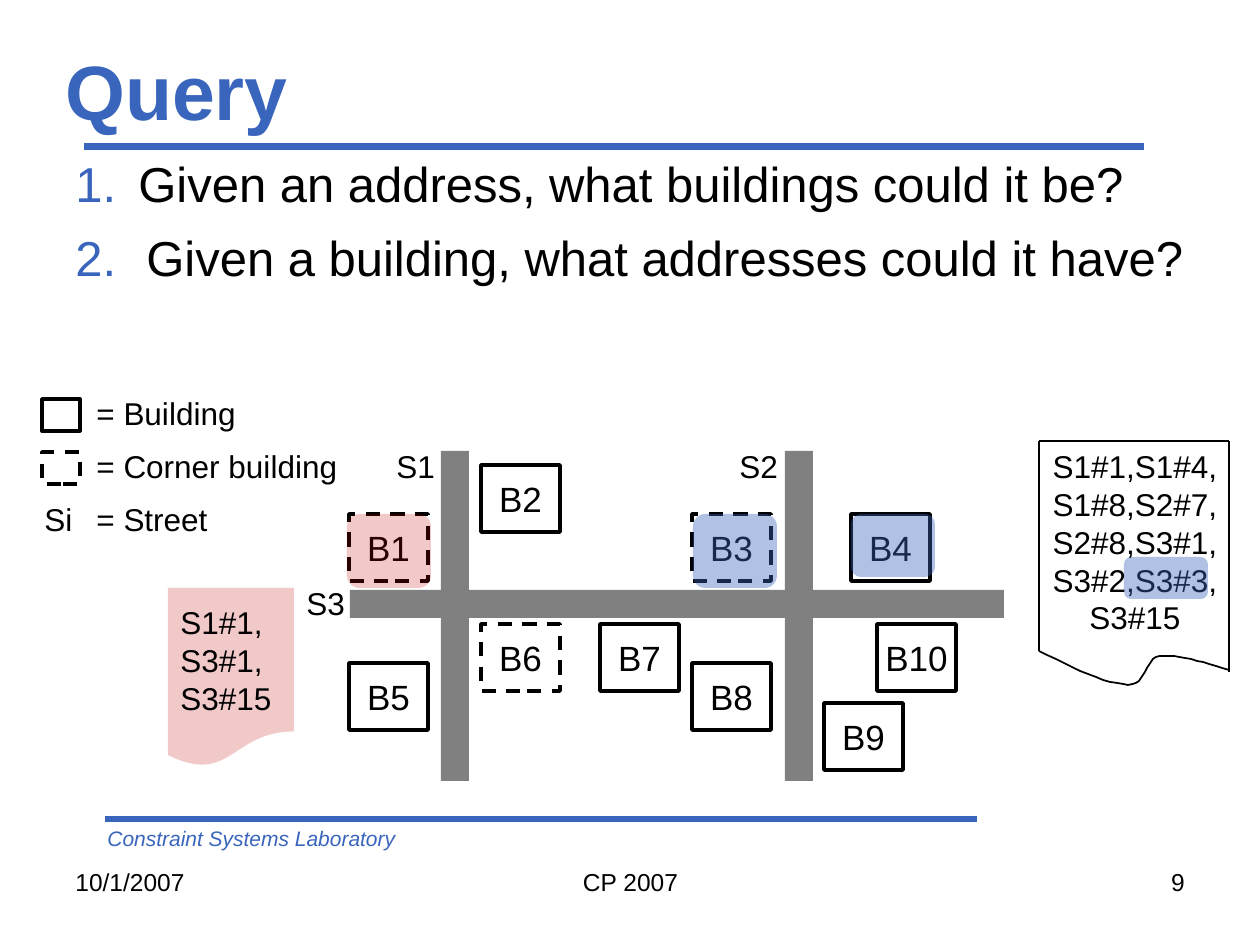
import pptx
import pptx.util
import pptx.dml.color
import pptx.enum.dml
import pptx.enum.shapes
import pptx.enum.text
import pptx.oxml
import pptx.oxml.ns

PX = 914400 / 126  # EMU in one px
RGB = pptx.dml.color.RGBColor.from_string
KIND = pptx.enum.shapes.MSO_SHAPE
ALIGN = pptx.enum.text.PP_ALIGN
DASH = pptx.enum.dml.MSO_LINE.DASH
MID = pptx.enum.text.MSO_ANCHOR.MIDDLE
NS = pptx.oxml.ns

THEME = {
    "font": "Arial",
    "blue": "3A65BC", "red": "C00000", "gray": "808080",
    "black": "000000", "white": "FFFFFF",
    "title": 44, "body": 28, "house": 20, "label": 18, "foot": 14, "lab": 12,
}

deck = pptx.Presentation()
deck.slide_width, deck.slide_height = round(1260 * PX), round(945 * PX)
slide = deck.slides.add_slide(deck.slide_layouts[6])


def box(rect, text="", size="label", kind=None, fill=None, alpha=None, edge=0,
        dash=None, color="black", align=ALIGN.LEFT, mid=False, wrap=False, **form):
    """Add a text box, or a preset shape when a kind is given."""
    spot = [round(v * PX) for v in rect]
    if kind is None:
        shape = slide.shapes.add_textbox(*spot)
    else:
        shape = slide.shapes.add_shape(kind, *spot)
        shape.shadow.inherit = False
        shape.fill.solid()
        shape.fill.fore_color.rgb = RGB(THEME[fill])
        if alpha:
            tint = shape.fill._xPr.find(".//" + NS.qn("a:srgbClr"))
            pptx.oxml.parse_xml(f'<a:alpha {NS.nsdecls("a")} val="{alpha * 1000}"/>')
            tint.append(pptx.oxml.parse_xml(
                f'<a:alpha {NS.nsdecls("a")} val="{alpha * 1000}"/>'))
        if edge:
            shape.line.color.rgb = RGB(THEME["black"])
            shape.line.width = pptx.util.Pt(edge)
            shape.line.dash_style = dash
        else:
            shape.line.fill.background()
    frame = shape.text_frame
    frame.word_wrap = wrap
    if mid:
        frame.vertical_anchor = MID
    form = {"name": THEME["font"], "size": pptx.util.Pt(THEME[size]), **form}
    for i, words in enumerate(text.split("\n") if text else []):
        para = frame.add_paragraph() if i else frame.paragraphs[0]
        para.alignment = align
        run = para.add_run()
        run.text = words
        for key, val in form.items():
            setattr(run.font, key, val)
        run.font.color.rgb = RGB(THEME[color])
    return shape


def rule(x1, y1, x2, y2, color, width):
    """Add a straight line without a shadow."""
    line = slide.shapes.add_connector(
        pptx.enum.shapes.MSO_CONNECTOR.STRAIGHT,
        *[round(v * PX) for v in (x1, y1, x2, y2)])
    line.line.color.rgb = RGB(THEME[color])
    line.line.width = pptx.util.Pt(width)
    line._element.spPr.append(
        pptx.oxml.parse_xml(f'<a:effectLst {NS.nsdecls("a")}/>'))


# Title and rules
rule(84, 147, 1144, 147, "blue", 4)
rule(105, 819, 977, 819, "blue", 4)
box((53, 42, 1134, 95), "Query", "title", color="blue", mid=True, wrap=True, bold=True)

# Numbered questions
for num, top, high, dent, text in (
        (1, 147, 84, 63, "Given an address, what buildings could it be?"),
        (2, 221, 95, 71, "Given a building, what addresses could it have?")):
    item = box((63, top, 1155, high), text, "body", wrap=True)
    props = item.text_frame.paragraphs[0]._p.get_or_add_pPr()
    props.set("marL", str(round(dent * PX)))
    props.set("indent", str(-round(dent * PX)))
    for xml in (f'<a:buClr {NS.nsdecls("a")}><a:srgbClr val="{THEME["blue"]}"/></a:buClr>',
                f'<a:buAutoNum {NS.nsdecls("a")} type="arabicPeriod" startAt="{num}"/>'):
        props.append(pptx.oxml.parse_xml(xml))

# Footer
box((95, 819, 662, 38), "Constraint Systems Laboratory", "lab", color="blue",
    wrap=True, italic=True)
for left, wide, text, align in ((63, 294, "10/1/2007", ALIGN.LEFT),
                                (431, 399, "CP 2007", ALIGN.CENTER),
                                (903, 294, "9", ALIGN.RIGHT)):
    box((left, 861, wide, 66), text, "foot", align=align, wrap=True)

# Streets
for rect in ((350, 590, 654, 28), (441, 451, 28, 330), (785, 451, 28, 330)):
    box(rect, kind=KIND.RECTANGLE, fill="gray")
for left, top, text in ((384, 441, "S1"), (727, 441, "S2"), (294, 578, "S3")):
    box((left, top, 64, 50), text)

# Buildings, dashed on corners
corners = ("B1", "B3", "B6")
for name, left, top in (
        ("B1", 349, 514), ("B2", 481, 465), ("B3", 692, 514), ("B4", 851, 514),
        ("B5", 349, 663), ("B6", 481, 624), ("B7", 600, 624), ("B8", 692, 663),
        ("B9", 824, 703), ("B10", 877, 624)):
    box((left, top, 79, 67), name, "house", KIND.RECTANGLE, "white", edge=2,
        dash=DASH if name in corners else None, align=ALIGN.CENTER, mid=True)

# Legend
for row, text in enumerate(("= Building", "= Corner building", "= Street")):
    top = 388 + 53 * row
    box((84, top, 268, 50), text)
    if row < 2:
        box((42, top + 11, 38, 32), kind=KIND.RECTANGLE, fill="white", edge=2,
            dash=DASH if row else None)
    else:
        box((32, top, 54, 50), "Si")

# Address sheet with a torn lower edge
box((1039, 441, 192, 204),
    "S1#1,S1#4,\nS1#8,S2#7,\nS2#8,S3#1,\nS3#2,S3#3,\nS3#15", align=ALIGN.CENTER)
rule(1039, 441, 1229, 441, "black", 1)
rule(1039, 651, 1039, 441, "black", 1)
rule(1229, 672, 1229, 441, "black", 1)
curves = (((1039, 651), (1072, 668), (1108, 684), (1128, 685)),
          ((1128, 685), (1148, 685), (1143, 659), (1160, 656)),
          ((1160, 656), (1177, 654), (1202, 662), (1229, 670)))
STEPS = 12
points = []
for curve in curves:
    for n in range(1, STEPS + 1):
        t = n / STEPS
        parts = ((1 - t) ** 3, 3 * t * (1 - t) ** 2, 3 * t * t * (1 - t), t ** 3)
        points.append([sum(k * p[axis] for k, p in zip(parts, curve))
                       for axis in (0, 1)])
path = slide.shapes.build_freeform(*curves[0][0], scale=PX)
path.add_line_segments(points, close=False)
edge = path.convert_to_shape()
edge.shadow.inherit = False
edge.fill.background()
edge.line.color.rgb = RGB(THEME["black"])
edge.line.width = pptx.util.Pt(1)

# Marks for the answers
for rect, color, alpha in (((1124, 557, 84, 42), "blue", 40),
                           ((851, 514, 84, 63), "blue", 40),
                           ((693, 514, 84, 74), "blue", 40),
                           ((347, 514, 84, 74), "red", 21)):
    box(rect, kind=KIND.ROUNDED_RECTANGLE, fill=color, alpha=alpha)
box((168, 588, 126, 179), "S1#1,\nS3#1,\nS3#15", kind=KIND.FLOWCHART_DOCUMENT,
    fill="red", alpha=21, mid=True, wrap=True)

deck.save("out.pptx")
